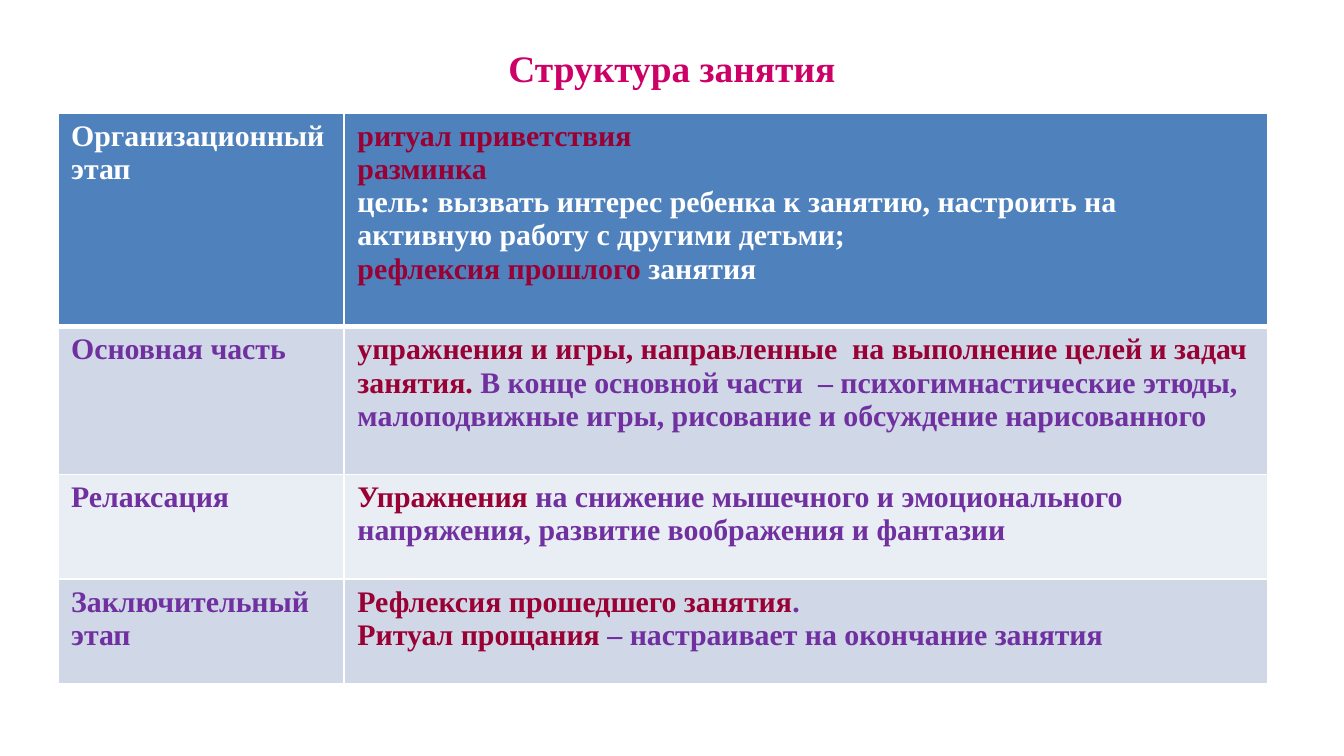
from dataclasses import dataclass

from lxml import etree
from pptx import Presentation
from pptx import util as u
from pptx.dml.color import RGBColor
from pptx.enum import text
from pptx.oxml.ns import qn


@dataclass(frozen=True)
class Theme:
    font: str = "Times New Roman"
    title_size: int = 20
    body_size: int = 16
    title: str = "CC0066"
    accent: str = "990033"
    body: str = "7030A0"
    white: str = "FFFFFF"
    header_fill: str = "4F81BD"
    band_fills: tuple = ("D0D8E8", "E9EDF4")
    line: float = 1
    header_line: float = 3


class LessonSlide:
    """Holds the theme and the current slide."""

    def __init__(self, prs, theme):
        self.theme = theme
        self.s = prs.slides.add_slide(prs.slide_layouts[5])

    def run(self, p, words, size, color):
        r = p.add_run()
        r.text = words
        style = {"name": self.theme.font, "size": u.Pt(size), "bold": True}
        for key, value in style.items():
            setattr(r.font, key, value)
        r.font.color.rgb = RGBColor.from_string(color)

    def title(self, words, box):
        sp = self.s.shapes.title
        for key, value in zip(("left", "top", "width", "height"), box):
            setattr(sp, key, u.Inches(value))
        tf = sp.text_frame
        tf.vertical_anchor = text.MSO_ANCHOR.MIDDLE
        p = tf.paragraphs[0]
        p.alignment = text.PP_ALIGN.CENTER
        self.run(p, words, self.theme.title_size, self.theme.title)

    def borders(self, cell, widths):
        """Draw the left, right, top and bottom lines of a cell."""
        tc_pr = cell._tc.get_or_add_tcPr()
        for i, (side, width) in enumerate(zip("LRTB", widths)):
            ln = etree.Element(qn(f"a:ln{side}"), w=str(u.Pt(width)))
            fill = etree.SubElement(ln, qn("a:solidFill"))
            etree.SubElement(fill, qn("a:srgbClr"), val=self.theme.white)
            tc_pr.insert(i, ln)

    def cell(self, cell, paragraphs, row):
        t = self.theme
        fill = t.band_fills[(row - 1) % 2] if row else t.header_fill
        cell.fill.solid()
        cell.fill.fore_color.rgb = RGBColor.from_string(fill)
        self.borders(cell, (t.line, t.line,
                            t.header_line if row == 1 else t.line,
                            t.header_line if row == 0 else t.line))
        tf = cell.text_frame
        for i, runs in enumerate(paragraphs):
            p = tf.add_paragraph() if i else tf.paragraphs[0]
            for words, color in runs:
                self.run(p, words, t.body_size, color)

    def table(self, rows, left, top, widths, heights):
        box = [u.Inches(v) for v in (left, top, sum(widths), sum(heights))]
        table = self.s.shapes.add_table(len(rows), len(widths), *box).table
        for column, width in zip(table.columns, widths):
            column.width = u.Inches(width)
        for i, (row, height) in enumerate(zip(rows, heights)):
            table.rows[i].height = u.Inches(height)
            for j, paragraphs in enumerate(row):
                self.cell(table.cell(i, j), paragraphs, i)


def main():
    # Widescreen 16:9 slide
    prs = Presentation()
    prs.slide_width, prs.slide_height = u.Inches(10), u.Inches(10 * 9 / 16)
    theme = Theme()
    accent, body, white = theme.accent, theme.body, theme.white

    # Each cell is a list of paragraphs, each paragraph a list of runs
    stages = [
        ([[("Организационный этап", white)]],
         [[("ритуал приветствия", accent)],
          [("разминка", accent)],
          [("цель: вызвать интерес ребенка к занятию, настроить на "
            "активную работу с другими детьми;", white)],
          [("рефлексия прошлого ", accent), ("занятия", white)]]),
        ([[("Основная часть", body)]],
         [[("упражнения и игры, направленные  на выполнение целей и задач "
            "занятия.", accent),
           (" В конце основной части  – психогимнастические этюды, "
            "малоподвижные игры, рисование и обсуждение нарисованного", body)]]),
        ([[("Релаксация", body)]],
         [[("Упражнения", accent),
           (" на снижение мышечного и эмоционального напряжения, "
            "развитие воображения и фантазии", body)]]),
        ([[("Заключительный этап", body)]],
         [[("Рефлексия прошедшего занятия", accent), (".", body)],
          [("Ритуал прощания ", accent),
           ("– настраивает на окончание занятия", body)]]),
    ]

    # Title and table of lesson stages
    slide = LessonSlide(prs, theme)
    slide.title("Структура занятия", (0.5, 0.23, 9, 0.54))
    slide.table(stages, 0.43, 0.84, (2.13, 6.87), (1.59, 1.1, 0.78, 0.78))

    prs.save("out.pptx")


if __name__ == "__main__":
    main()
